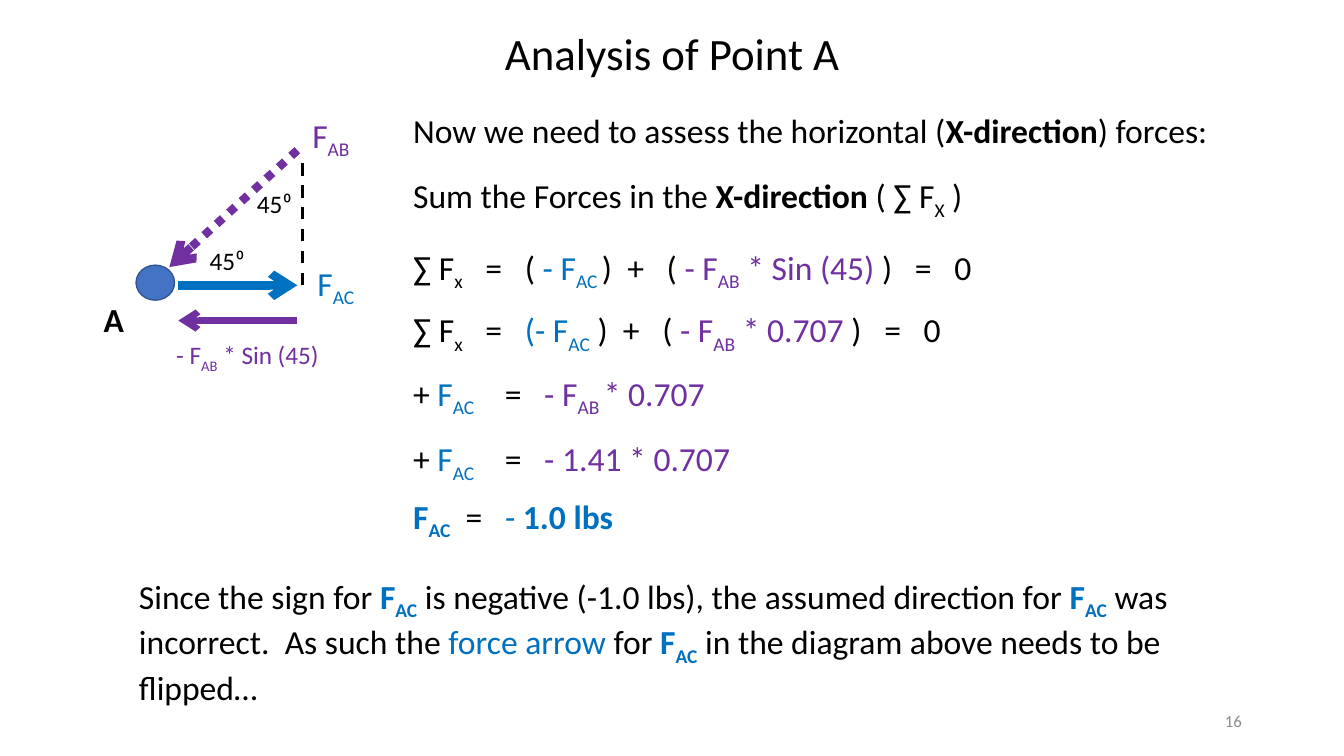
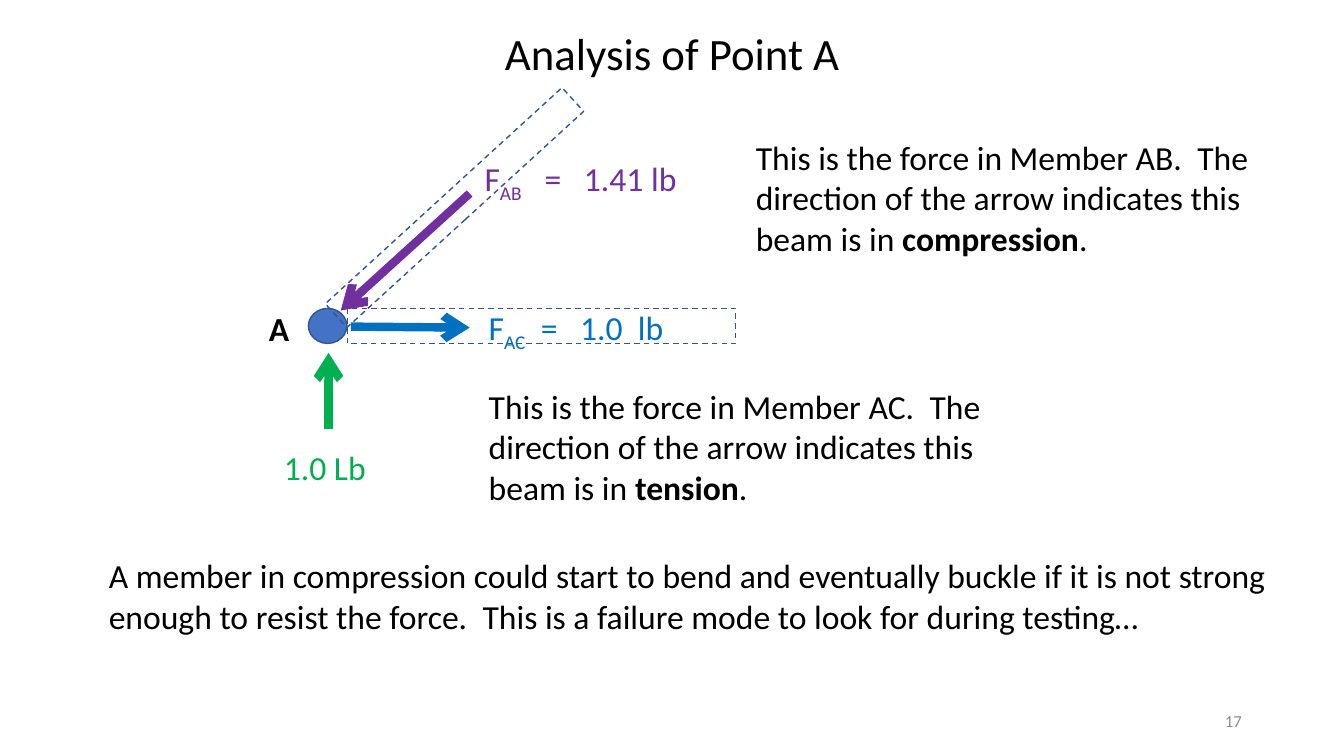
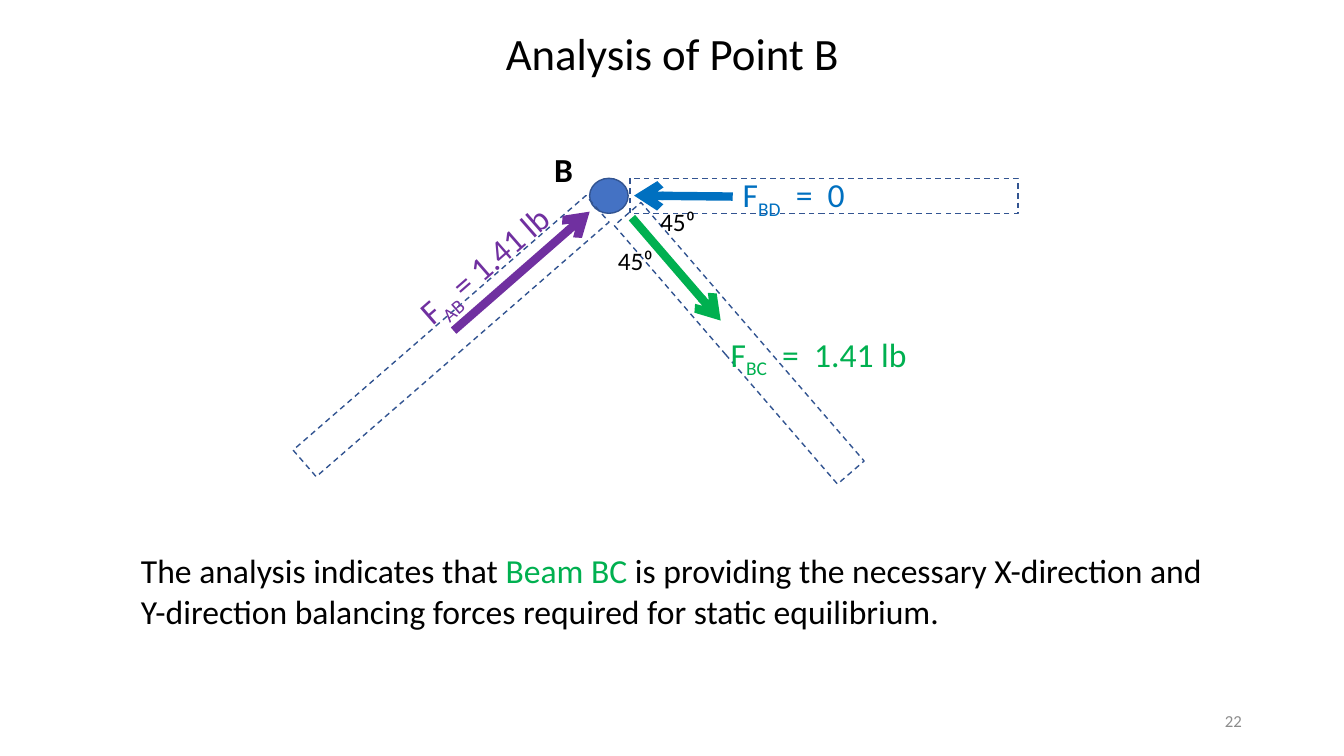
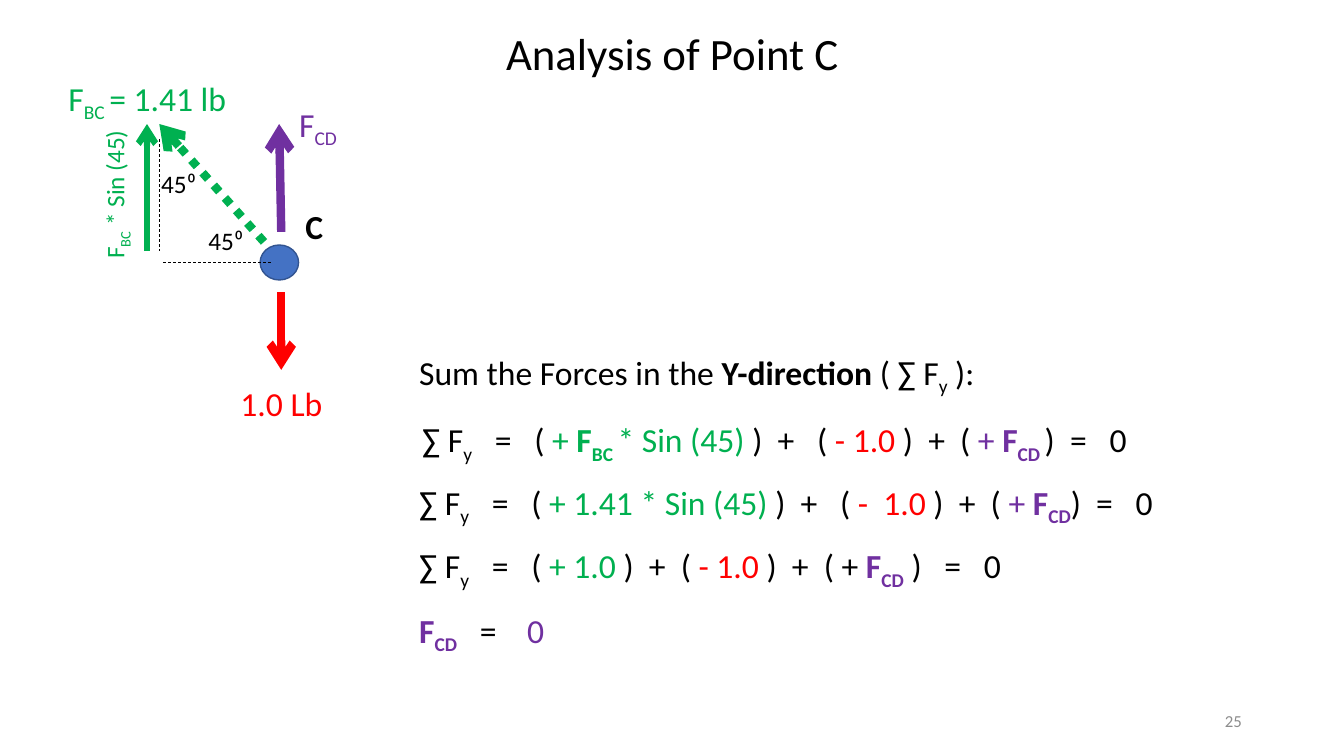
from itertools import groupby

from lxml import etree
from pptx import Presentation
from pptx.dml.color import RGBColor
from pptx.enum.dml import MSO_LINE
from pptx.enum.shapes import MSO_CONNECTOR, MSO_SHAPE
from pptx.enum.text import MSO_ANCHOR, MSO_AUTO_SIZE, PP_ALIGN
from pptx.oxml.ns import qn
from pptx.util import Pt

DASH, DOT = MSO_LINE.DASH, MSO_LINE.ROUND_DOT
STRAIGHT = MSO_CONNECTOR.STRAIGHT
OVAL, RECTANGLE = MSO_SHAPE.OVAL, MSO_SHAPE.RECTANGLE
LEFT, CENTER, RIGHT = PP_ALIGN.LEFT, PP_ALIGN.CENTER, PP_ALIGN.RIGHT
MIDDLE = MSO_ANCHOR.MIDDLE
FIT_SHAPE, NO_FIT = MSO_AUTO_SIZE.SHAPE_TO_FIT_TEXT, MSO_AUTO_SIZE.NONE

# Shared style
FONT = "Calibri"
COLORS = {"black": "000000", "purple": "7030A0", "blue": "0070C0",
          "green": "00B050", "red": "FF0000", "gray": "8C8C8C",
          "node": "4472C4", "outline": "325491"}
NODE_SIZE = (27.5, 25)
TITLE_BOX = (184, 14.4, 592.5, 46)
NUMBER_BOX = (678.2, 500.4, 216, 28.8)
TITLE_SIZE, BODY_SIZE, SMALL_SIZE, NUMBER_SIZE = 32, 24, 18, 12
# Marks in the content for one widened space, with its extra width
GAPS = {"^": 5.4, "~": 10.8, "|": 16.3}


def force(member, style):
    """Runs for a force symbol with its member as subscript."""
    return [("F", style), (member, style + " sub")]


def total(axis):
    return [("∑ F", ""), (axis, "sub")]


# Content. Runs are (text, style); labels are (left, top, width, runs, options).
# Arrows are (start, end, color, width, dash); guides have no arrowhead.
# Beams are (left, top, width, height, rotation).
WIDE = {"wrap": True}
SMALL = {"wrap": True, "size": SMALL_SIZE}
CENTERED = {"wrap": True, "align": CENTER}
RIGHT_ANGLE_HALF = [("45⁰", "")]
DIRECTION = ("The direction of the arrow indicates this beam is in ", "")

SLIDES = [
    {
        "title": "Analysis of Point A", "number": "16",
        "node": (97.2, 189.4), "name": ("A", 67, 210.2),
        "arrows": [
            ((212.4, 107.3), (121, 190.8), "purple", 6, DOT),
            ((127.4, 203.8), (212.4, 203.8), "blue", 6, None),
            ((212.4, 229), (127.4, 229), "purple", 4.5, None),
        ],
        "guides": [((216, 203.8), (216, 114.5), "black", 2.25, DASH)],
        "labels": [
            (216, 78.5, 48.2, force("AB", "purple"), {}),
            (219.6, 184.3, 46, force("AC", "blue"), {}),
            (142.6, 171.4, 46, RIGHT_ANGLE_HALF, SMALL),
            (176.4, 131, 46, RIGHT_ANGLE_HALF, SMALL),
            (118.8, 239, 126.7,
             [("- ", "purple"), *force("AB", "purple"), (" * Sin (45)", "purple")],
             {"size": SMALL_SIZE}),
            (288, 74.9, 606,
             [("Now we need to assess the horizontal (", ""),
              ("X-direction", "bold"), (") forces:", "")], WIDE),
            (92.2, 407.5, 777.6,
             [("Since the sign for ", ""), *force("AC", "blue bold"),
              (" is negative (-1.0 lbs), the assumed direction for ", ""),
              *force("AC", "blue bold"), (" was incorrect.^As such the ", ""),
              ("force arrow", "blue"), (" for ", ""), *force("AC", "blue bold"),
              (" in the diagram above needs to be flipped…", "")], WIDE),
        ],
        "equations": [
            (288, 121.7, [("Sum the Forces in the ", ""), ("X-direction", "bold"),
                          (" ( ∑ F", ""), ("X", "sub"), (" )", "")]),
            (288, 172.8, [*total("x"), ("~=~( ", ""), ("- ", "blue"),
                          *force("AC ", "blue"), (")^+~( ", ""), ("- ", "purple"),
                          *force("AB", "purple"), (" * Sin (45) ", "purple"),
                          (")~=~0", "")]),
            (288, 217.4, [*total("x"), ("~=~", ""), ("(- ", "blue"),
                          *force("AC", "blue"), (" )^+~( ", ""), ("- ", "purple"),
                          *force("AB", "purple"), (" * 0.707 ", "purple"),
                          (")~=~0", "")]),
            (288, 262.8, [("+ ", ""), *force("AC", "blue"), ("|=~", ""),
                          ("- ", "purple"), *force("AB ", "purple"),
                          ("* 0.707", "purple")]),
            (288, 309.6, [("+ ", ""), *force("AC", "blue"), ("|=~", ""),
                          ("- 1.41 * 0.707", "purple")]),
            (288, 350.6, [*force("AC", "blue bold"), ("^=~", ""), ("-", "blue"),
                          (" 1.0 lbs", "blue bold")]),
        ],
    },
    {
        "title": "Analysis of Point A", "number": "17",
        "node": (220.3, 220.3), "name": ("A", 185, 216.7),
        "beams": [(248.4, 220.3, 277.2, 25.2, 0), (210.2, 136.8, 229, 23, 317.6)],
        "arrows": [
            ((234.7, 306.7), (234.7, 252), "green", 6, None),
            ((335.5, 138.2), (243.4, 221.8), "purple", 6, None),
            ((250.6, 233.3), (335.5, 234), "blue", 6, None),
        ],
        "labels": [
            (193, 316, 83.5, [("1.0 Lb ", "green")], CENTERED),
            (339, 109.4, 157.7,
             [*force("AB", "purple"), ("~=~1.41 lb", "purple")], {}),
            (342, 216, 139, [*force("AC", "blue"), ("^=~1.0^lb", "blue")], {}),
            (532.8, 94.3, 382.3,
             [("This is the force in Member AB.^", ""), DIRECTION,
              ("compression", "bold"), (".", "")], WIDE),
            (342, 272.2, 383,
             [("This is the force in Member AC.^", ""), DIRECTION,
              ("tension", "bold"), (".", "")], WIDE),
            (70.6, 393, 843.8,
             [("A member in compression could start to bend and eventually buckle "
               "if it is not strong enough to resist the force.^This is a failure "
               "mode to look for during testing…", "")], WIDE),
        ],
    },
    {
        "title": "Analysis of Point B", "number": "22",
        "node": (421.2, 127.4), "name": ("B", 388.8, 103),
        "beams": [(450, 127.4, 277.2, 25.2, 0), (406, 232.6, 244, 25.2, 49.2),
                  (183.6, 227.5, 277.2, 25.2, 319)],
        "arrows": [
            ((324, 236.2), (421.2, 151.2), "purple", 6, None),
            ((523.4, 140.4), (452.9, 139.7), "blue", 6, None),
            ((451.4, 155.5), (514.8, 229), "green", 6, None),
        ],
        "labels": [
            (280.8, 168.5, 135.4, [*force("AB ", "purple"), ("= 1.41 lb", "purple")],
             {"rotation": 318.9}),
            (523.4, 121, 94.3, [*force("BD", "blue"), ("^=^0", "blue")], {}),
            (514.8, 234.7, 146.9, [*force("BC", "green"), ("^=^1.41 lb", "green")], {}),
            (434.2, 172, 46, RIGHT_ANGLE_HALF, SMALL),
            (464.4, 144, 46, RIGHT_ANGLE_HALF, SMALL),
            (93.6, 389.5, 788.4,
             [("The analysis indicates that ", ""), ("Beam BC ", "green"),
              ("is providing the necessary X-direction and Y-direction balancing "
               "forces required for static equilibrium.", "")], WIDE),
        ],
    },
    {
        "title": "Analysis of Point C", "number": "25",
        "node": (185.8, 175), "name": ("C", 211, 143.3),
        "arrows": [
            ((200.9, 165.6), (199.4, 88.6), "purple", 6, None),
            ((188.6, 172.8), (113.8, 88.6), "green", 6, DOT),
            ((200.9, 208.8), (200.9, 264.2), "red", 6, None),
            ((105, 179.3), (105, 88.6), "green", 4.5, None),
        ],
        "guides": [((113.8, 99.4), (113.8, 179.3), "black", 0.5, DASH),
                   ((116.6, 187.2), (195, 187.2), "black", 0.5, DASH)],
        "labels": [
            (41.8, 51.8, 136, [*force("BC ", "green"), ("= 1.41 lb", "green")], {}),
            (206.6, 70.6, 53.3, force("CD", "purple"), {}),
            (162, 270, 83.5, [("1.0 Lb ", "red")], CENTERED),
            (108, 116.6, 46, RIGHT_ANGLE_HALF, SMALL),
            (141.8, 157.7, 46, RIGHT_ANGLE_HALF, SMALL),
            (25.2, 121, 113, [*force("BC", "green"), (" * Sin (45)", "green")],
             {"size": SMALL_SIZE, "rotation": 270}),
        ],
        "equations": [
            (292.3, 247.7, [("Sum the Forces in the ", ""), ("Y-direction", "bold"),
                            (" ( ∑ F", ""), ("y", "sub"), (" ):", "")]),
            (294.5, 295.9, [*total("y"), ("~=~( ", ""), ("+ ", "green"),
                            *force("BC ", "green bold"), ("* Sin (45) ", "green"),
                            (")^+~( ", ""), ("- 1.0 ", "red"), (")^+^( ", ""),
                            ("+ ", "purple"), *force("CD ", "purple bold"),
                            (")^=~0", "")]),
            (292.3, 340.6, [*total("y"), ("~=~( ", ""),
                            ("+ 1.41 * Sin (45) ", "green"), (")^+~( ", ""),
                            ("-^1.0", "red"), (" )^+^( ", ""), ("+ ", "purple"),
                            *force("CD", "purple bold"), (")^=~0", "")]),
            (292.3, 385.9, [*total("y"), ("~=~( ", ""), ("+ 1.0 ", "green"),
                            (")^+^( ", ""), ("- 1.0 ", "red"), (")^+^( + ", ""),
                            *force("CD", "purple bold"), (" )~=~0", "")]),
            (292.3, 432, [*force("CD", "purple bold"), ("~=|", ""), ("0", "purple")]),
        ],
    },
]
EQUATION_WIDTH = 580


def rgb(name):
    return RGBColor.from_string(COLORS[name])


def write_runs(paragraph, runs, size):
    for text, style in runs:
        words = style.split()
        color = next((word for word in words if word in COLORS), "black")
        # A gap mark becomes one space with added character spacing
        for gap, characters in groupby(text, lambda c: GAPS.get(c, 0)):
            run = paragraph.add_run()
            run.text = " " if gap else "".join(characters)
            run.font.name, run.font.size = FONT, Pt(size)
            run.font.bold = "bold" in words
            run.font.color.rgb = rgb(color)
            properties = run._r.get_or_add_rPr()
            if "sub" in words:
                properties.set("baseline", "-25000")
            if gap:
                properties.set("spc", str(round(gap * 100)))


def add_label(slide, left, top, width, runs, size=BODY_SIZE, wrap=False,
              align=LEFT, rotation=0):
    height = size * 1.2 + 7.2
    box = slide.shapes.add_textbox(Pt(left), Pt(top), Pt(width), Pt(height))
    box.rotation = rotation
    frame = box.text_frame
    frame.word_wrap, frame.auto_size = wrap, FIT_SHAPE
    frame.paragraphs[0].alignment = align
    write_runs(frame.paragraphs[0], runs, size)
    return box


def add_outlined(slide, kind, left, top, width, height, rotation=0):
    shape = slide.shapes.add_shape(kind, Pt(left), Pt(top), Pt(width), Pt(height))
    shape.rotation = rotation
    shape.shadow.inherit = False
    shape.line.color.rgb, shape.line.width = rgb("outline"), Pt(1)
    return shape


def add_line(slide, start, end, color, width, dash, arrowhead):
    line = slide.shapes.add_connector(STRAIGHT, *[Pt(v) for v in (*start, *end)])
    line.line.color.rgb, line.line.width = rgb(color), Pt(width)
    if dash:
        line.line.dash_style = dash
    if arrowhead:
        etree.SubElement(line.line._get_or_add_ln(), qn("a:tailEnd"), type="arrow")
    etree.SubElement(line._element.spPr, qn("a:effectLst"))


def add_frame(presentation, title, number):
    """A new slide with its title and slide number."""
    slide = presentation.slides.add_slide(presentation.slide_layouts[5])
    shape = slide.shapes.title
    shape.left, shape.top, shape.width, shape.height = [Pt(v) for v in TITLE_BOX]
    shape.text_frame.auto_size = NO_FIT
    paragraph = shape.text_frame.paragraphs[0]
    paragraph.alignment = CENTER
    write_runs(paragraph, [(title, "")], TITLE_SIZE)

    left, top, width, height = NUMBER_BOX
    box = add_label(slide, left, top, width, [(number, "gray")],
                    NUMBER_SIZE, True, RIGHT)
    box.text_frame.auto_size = NO_FIT
    box.text_frame.vertical_anchor = MIDDLE
    box.height = Pt(height)
    return slide


def build_slide(presentation, content):
    slide = add_frame(presentation, content["title"], content["number"])

    # Joint and beams
    node = add_outlined(slide, OVAL, *content["node"], *NODE_SIZE)
    node.fill.solid()
    node.fill.fore_color.rgb = rgb("node")
    for beam_box in content.get("beams", []):
        beam = add_outlined(slide, RECTANGLE, *beam_box)
        beam.fill.background()
        beam.line.dash_style = DASH

    # Forces and guide lines
    for arrow in content["arrows"]:
        add_line(slide, *arrow, arrowhead=True)
    for guide in content.get("guides", []):
        add_line(slide, *guide, arrowhead=False)

    # Labels and equations
    name, left, top = content["name"]
    add_label(slide, left, top, 34.6, [(name, "bold")], wrap=True)
    for left, top, width, runs, options in content["labels"]:
        add_label(slide, left, top, width, runs, **options)
    for left, top, runs in content.get("equations", []):
        add_label(slide, left, top, EQUATION_WIDTH, runs, wrap=True)


def main():
    presentation = Presentation()
    presentation.slide_width, presentation.slide_height = Pt(960), Pt(540)
    for content in SLIDES:
        build_slide(presentation, content)
    presentation.save("out.pptx")


if __name__ == "__main__":
    main()
